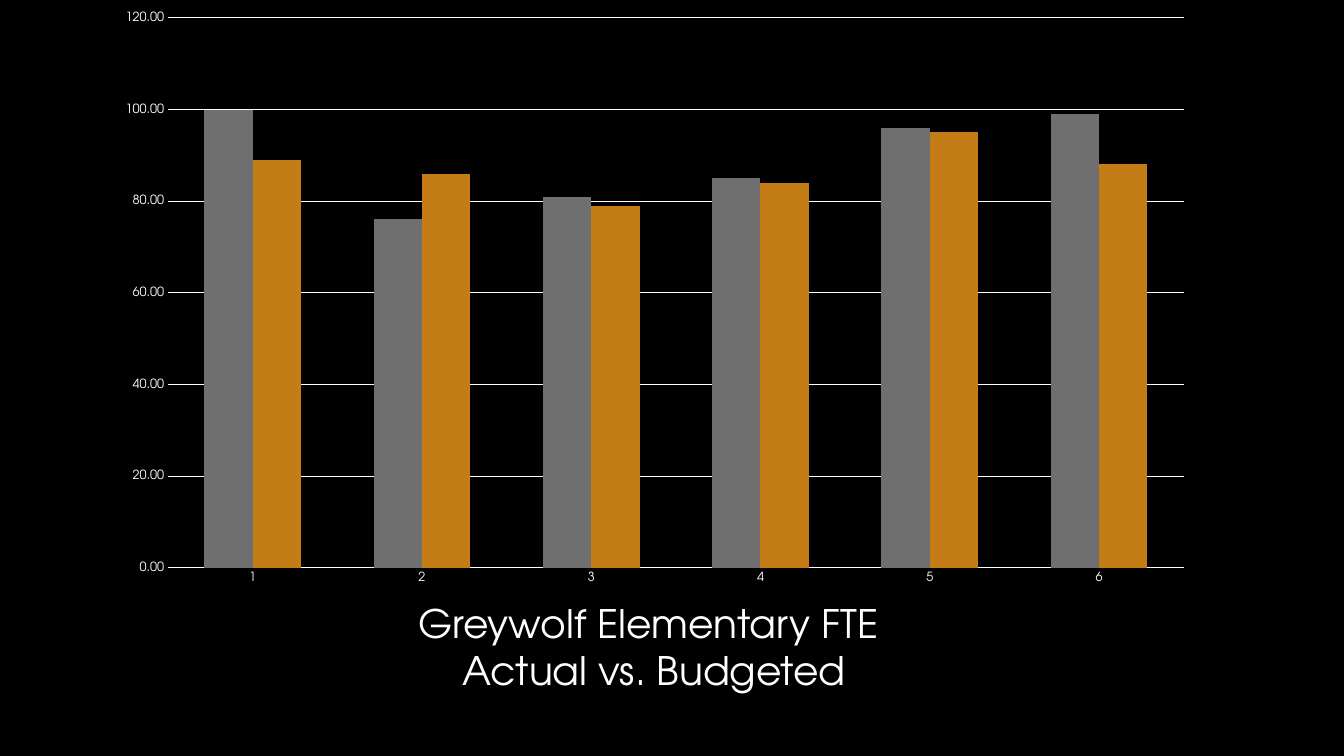
from dataclasses import dataclass

from lxml.etree import SubElement
from pptx import Presentation
from pptx.chart.data import CategoryChartData
from pptx.dml.color import RGBColor
from pptx.enum.chart import XL_CHART_TYPE, XL_TICK_MARK
from pptx.enum.text import MSO_AUTO_SIZE, PP_ALIGN
from pptx.oxml.ns import qn
from pptx.util import Inches, Pt


@dataclass(frozen=True)
class Theme:
    background: RGBColor = RGBColor(0x00, 0x00, 0x00)
    text: RGBColor = RGBColor(0xFF, 0xFF, 0xFF)
    actual: RGBColor = RGBColor(0x6F, 0x6F, 0x6F)
    budgeted: RGBColor = RGBColor(0xC4, 0x7C, 0x16)
    font: str = "TeX Gyre Adventor"
    title_size: Pt = Pt(28)
    chart_size: Pt = Pt(10)
    axis_size: Pt = Pt(9)
    grid_width: Pt = Pt(0.75)


theme = Theme()


def style_font(font, size):
    font.name = theme.font
    font.size = size
    font.color.rgb = theme.text


prs = Presentation()
prs.slide_width = Inches(13.33)
prs.slide_height = Inches(7.5)
s = prs.slides.add_slide(prs.slide_layouts[6])
s.background.fill.solid()
s.background.fill.fore_color.rgb = theme.background

# Title below the chart
title = s.shapes.add_textbox(Inches(3.43), Inches(5.9), Inches(6.11), Inches(1.04))
tf = title.text_frame
tf.word_wrap = True
tf.auto_size = MSO_AUTO_SIZE.SHAPE_TO_FIT_TEXT
tf.text = "Greywolf Elementary FTE \nActual vs. Budgeted"
for p in tf.paragraphs:
    p.alignment = PP_ALIGN.CENTER
    for r in p.runs:
        style_font(r.font, theme.title_size)

# Actual and budgeted FTE
data = CategoryChartData(number_format="0.00")
data.categories = ["1", "2", "3", "4", "5", "6"]
data.add_series("Actual", [100, 76, 81, 85, 96, 99])
data.add_series("Budgeted", [89, 86, 79, 84, 95, 88])
chart = s.shapes.add_chart(
    XL_CHART_TYPE.COLUMN_CLUSTERED,
    Inches(1.01), Inches(0), Inches(10.95), Inches(5.93), data,
).chart
chart.has_legend = False
chart.has_title = False
style_font(chart.font, theme.chart_size)

plot = chart.plots[0]
plot.gap_width = 150
plot.overlap = 0
plot.vary_by_categories = False
for series, color in zip(plot.series, (theme.actual, theme.budgeted)):
    series.format.fill.solid()
    series.format.fill.fore_color.rgb = color

for axis in (chart.category_axis, chart.value_axis):
    axis.major_tick_mark = XL_TICK_MARK.NONE
    axis.minor_tick_mark = XL_TICK_MARK.NONE
    axis.format.line.fill.background()
    style_font(axis.tick_labels.font, theme.axis_size)

values = chart.value_axis
values.minimum_scale = 0
values.maximum_scale = 120
values.major_unit = 20
values.tick_labels.number_format = "0.00"
values.tick_labels.number_format_is_linked = False
values.has_major_gridlines = True
grid = values.major_gridlines.format.line
grid.color.rgb = theme.text
grid.width = theme.grid_width

# Fix the inner plot area as fractions of the chart frame
plot_area = chart.element.find(".//" + qn("c:plotArea"))
layout = plot_area.find(qn("c:layout"))
if layout is None:
    layout = SubElement(plot_area, qn("c:layout"))
    plot_area.insert(0, layout)
manual = SubElement(layout, qn("c:manualLayout"))
for tag, value in (
    ("layoutTarget", "inner"), ("xMode", "edge"), ("yMode", "edge"),
    ("x", "0.06"), ("y", "0.03"), ("w", "0.92"), ("h", "0.92"),
):
    SubElement(manual, qn("c:" + tag)).set("val", value)

prs.save("out.pptx")
